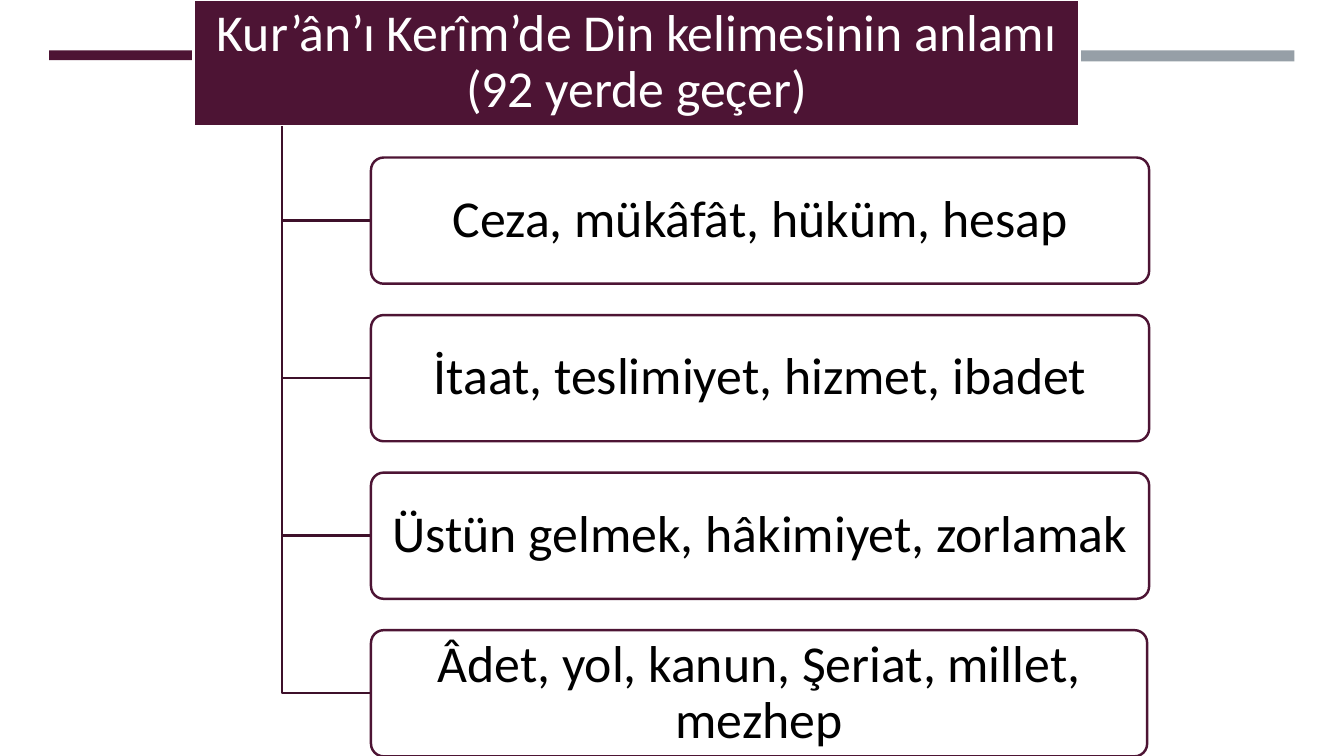
from dataclasses import dataclass

from lxml import etree
from pptx import Presentation
from pptx.dml.color import RGBColor
from pptx.enum import shapes, text
from pptx.oxml import ns
from pptx.util import Cm, Pt

PLUM = RGBColor(0x4D, 0x14, 0x34)
DARK_PLUM = RGBColor(0x3E, 0x10, 0x2A)
GREY = RGBColor(0x96, 0x9F, 0xA7)
WHITE = RGBColor(0xFF, 0xFF, 0xFF)
BLACK = RGBColor(0x00, 0x00, 0x00)

FONT = "Calibri"
FONT_SIZE = Pt(37)
LINE_WIDTH = Pt(1.75)
CORNER = 0.1

# Tree geometry in centimetres
BOX_HEIGHT = 3.18
PITCH = 3.97
TITLE_LEFT, TITLE_WIDTH = 4.88, 22.33
TRUNK_X = 7.11
BOX_LEFT = 9.35


@dataclass
class Bar:
    left: float
    height: float
    color: RGBColor


@dataclass
class Meaning:
    label: str
    width: float = 19.61


TITLE = "Kur’ân’ı Kerîm’de Din kelimesinin anlamı (92 yerde geçer)"
BARS = [Bar(1.24, 0.25, PLUM), Bar(22.33, 0.28, GREY)]
MEANINGS = [
    Meaning("Ceza, mükâfât, hüküm, hesap"),
    Meaning("İtaat, teslimiyet, hizmet, ibadet"),
    Meaning("Üstün gelmek, hâkimiyet, zorlamak"),
    Meaning("Âdet, yol, kanun, Şeriat, millet, mezhep", 19.56),
]


def set_style(s, fill: RGBColor, line: RGBColor) -> None:
    s.fill.solid()
    s.fill.fore_color.rgb = fill
    s.line.color.rgb = line
    s.line.width = LINE_WIDTH


def set_label(s, label: str, color: RGBColor) -> None:
    tf = s.text_frame
    tf.text = label
    tf.word_wrap = True
    tf.auto_size = text.MSO_AUTO_SIZE.NONE
    tf.vertical_anchor = text.MSO_ANCHOR.MIDDLE
    tf.margin_left = tf.margin_right = Cm(0.2)
    tf.margin_top = tf.margin_bottom = Cm(0.13)
    p = tf.paragraphs[0]
    p.alignment = text.PP_ALIGN.CENTER
    p.line_spacing = 0.9
    p.space_before = Pt(0)
    font = p.runs[0].font
    font.name, font.size, font.color.rgb = FONT, FONT_SIZE, color


def add_bar(slide, bar: Bar) -> None:
    s = slide.shapes.add_shape(shapes.MSO_SHAPE.RECTANGLE, Cm(bar.left),
                               Cm(1.27), Cm(10.29), Cm(bar.height))
    s.shadow.inherit = False
    s.fill.solid()
    s.fill.fore_color.rgb = bar.color
    s.line.fill.background()


def format_title(slide) -> None:
    s = slide.shapes.title
    s.left, s.top = Cm(TITLE_LEFT), Cm(0)
    s.width, s.height = Cm(TITLE_WIDTH), Cm(BOX_HEIGHT)
    # Rounded outline for the placeholder
    geom = etree.SubElement(s._element.spPr, ns.qn("a:prstGeom"), prst="roundRect")
    guides = etree.SubElement(geom, ns.qn("a:avLst"))
    etree.SubElement(guides, ns.qn("a:gd"), name="adj", fmla=f"val {CORNER * 100000:.0f}")
    set_style(s, PLUM, WHITE)
    set_label(s, TITLE, WHITE)
    # Bring the title in front of the bars
    slide.shapes._spTree.append(s._element)


def add_branch(slide, y: float) -> None:
    builder = slide.shapes.build_freeform(Cm(TRUNK_X), Cm(BOX_HEIGHT))
    builder.add_line_segments([(Cm(TRUNK_X), Cm(y)), (Cm(BOX_LEFT), Cm(y))], close=False)
    s = builder.convert_to_shape()
    s.shadow.inherit = False
    s.fill.background()
    s.line.color.rgb = DARK_PLUM
    s.line.width = LINE_WIDTH


def add_meaning(slide, meaning: Meaning, top: float) -> None:
    s = slide.shapes.add_shape(shapes.MSO_SHAPE.ROUNDED_RECTANGLE, Cm(BOX_LEFT),
                               Cm(top), Cm(meaning.width), Cm(BOX_HEIGHT))
    s.adjustments[0] = CORNER
    s.shadow.inherit = False
    set_style(s, WHITE, PLUM)
    # Slightly transparent fill
    color = s._element.spPr.find(ns.qn("a:solidFill"))[0]
    etree.SubElement(color, ns.qn("a:alpha"), val="90000")
    set_label(s, meaning.label, BLACK)


def main() -> None:
    prs = Presentation()
    prs.slide_width, prs.slide_height = Cm(33.87), Cm(19.05)
    slide = prs.slides.add_slide(prs.slide_layouts.get_by_name("Title Only"))

    # Bars at the top, then the title over them
    for bar in BARS:
        add_bar(slide, bar)
    format_title(slide)

    # Meanings hanging from the title
    for i, meaning in enumerate(MEANINGS, start=1):
        top = i * PITCH
        add_branch(slide, top + BOX_HEIGHT / 2)
        add_meaning(slide, meaning, top)

    prs.save("out.pptx")


if __name__ == "__main__":
    main()
